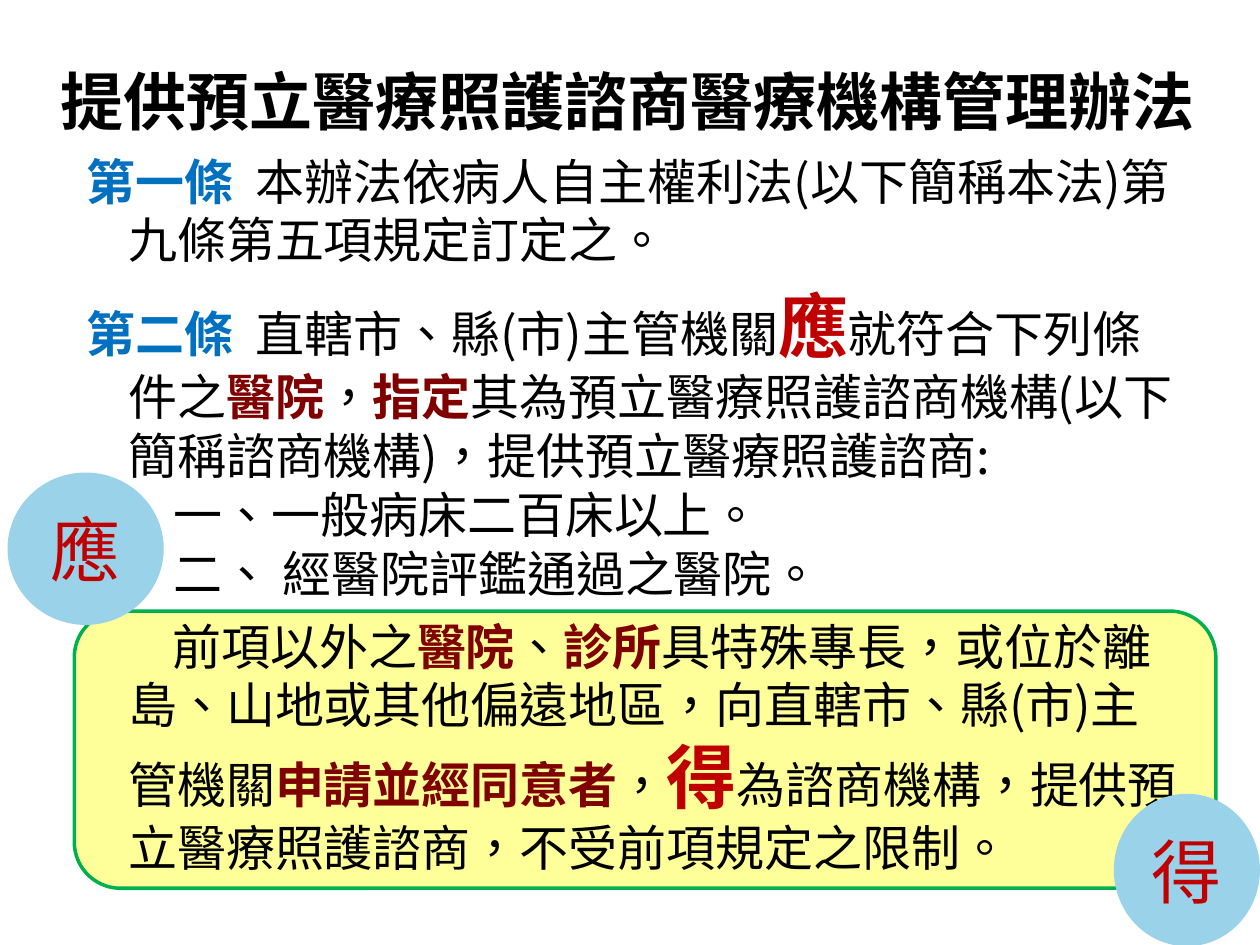
from lxml.etree import SubElement
from pptx import Presentation
from pptx.dml.color import RGBColor
from pptx.enum.lang import MSO_LANGUAGE_ID
from pptx.enum.shapes import MSO_SHAPE
from pptx.enum.text import MSO_ANCHOR, PP_ALIGN
from pptx.oxml.ns import qn
from pptx.util import Inches, Pt

FONT = "Noto Sans CJK SC"
STYLES = {
    "title": {"size": Pt(36), "bold": True, "color": "000000"},
    "plain": {"size": Pt(28), "bold": False, "color": "000000"},
    "article": {"size": Pt(28), "bold": True, "color": "0070C0"},
    "term": {"size": Pt(28), "bold": True, "color": "800000"},
    "duty": {"size": Pt(40), "bold": True, "color": "C00000"},
    "badge": {"size": Pt(40), "bold": False, "color": "C00000"},
}

presentation = Presentation()
presentation.slide_width = Inches(10)
presentation.slide_height = Inches(7.5)
slide = presentation.slides.add_slide(presentation.slide_layouts[6])


def color(value):
    return RGBColor.from_string(value)


def add_run(paragraph, text, style, name=FONT):
    run = paragraph.add_run()
    run.text = text
    values = {"name": name, "language_id": MSO_LANGUAGE_ID.TRADITIONAL_CHINESE} | STYLES[style]
    for attribute, value in values.items():
        if attribute == "color":
            run.font.color.rgb = color(value)
        else:
            setattr(run.font, attribute, value)
    SubElement(run.font._element, qn("a:ea")).set("typeface", FONT)


panel = slide.shapes.add_shape(
    MSO_SHAPE.ROUNDED_RECTANGLE, Inches(0.59), Inches(4.85), Inches(9.06), Inches(2.2))
panel.shadow.inherit = False
panel.fill.solid()
panel.fill.fore_color.rgb = color("FFFF99")
panel.line.color.rgb = color("00B050")
panel.line.width = Pt(2)

title = slide.shapes.add_textbox(Inches(0.32), Inches(0.5), Inches(9.32), Inches(0.76)).text_frame
frame_format = {"word_wrap": True, "vertical_anchor": MSO_ANCHOR.TOP,
                "margin_left": 0, "margin_right": 0, "margin_top": 0, "margin_bottom": 0}
for attribute, value in frame_format.items():
    setattr(title, attribute, value)
title.paragraphs[0].alignment = PP_ALIGN.CENTER
add_run(title.paragraphs[0], "提供預立醫療照護諮商醫療機構管理辦法", "title")

articles = [
    (0.33, -0.46, 8, [
        ("第一條  ", "article"),
        ("本辦法依病人自主權利法(以下簡稱本法)第九條第五項規定訂定之。", "plain")]),
    (0.33, -0.46, 8, [
        ("第二條  ", "article"), ("直轄市、縣(市)主管機關", "plain"), ("應", "duty"),
        ("就符合下列條件之", "plain"), ("醫院", "term"), ("，", "plain"), ("指定", "term"),
        ("其為預立醫療照護諮商機構(以下簡稱諮商機構)，提供預立醫療照護諮商:", "plain")]),
    (0.69, 0, 0, [("一、一般病床二百床以上。", "plain")]),
    (0.69, 0, 0, [("二、 經醫院評鑑通過之醫院。", "plain")]),
    (0.33, 0.35, 8, [
        ("前項以外之", "plain"), ("醫院", "term"), ("、", "plain"), ("診所", "term"),
        ("具特殊專長，或位於離島、山地或其他偏遠地區，向直轄市、縣(市)主管機關", "plain"),
        ("申請並經同意者", "term"), ("，", "plain"), ("得", "duty"),
        ("為諮商機構，提供預立醫療照護諮商，不受前項規定之限制。", "plain")]),
]
body = slide.shapes.add_textbox(Inches(0.59), Inches(1.15), Inches(8.87), Inches(4)).text_frame
body.word_wrap = True
for index, (margin, indent, space, runs) in enumerate(articles):
    paragraph = body.add_paragraph() if index else body.paragraphs[0]
    paragraph.space_before = Pt(space)
    properties = paragraph._p.get_or_add_pPr()
    properties.set("marL", str(Inches(margin)))
    properties.set("indent", str(Inches(indent)))
    for text, style in runs:
        add_run(paragraph, text, style)

for text, left, top, width in [("得", 8.84, 6.3, 1.16), ("應", 0.06, 3.75, 1.24)]:
    badge = slide.shapes.add_shape(
        MSO_SHAPE.OVAL, Inches(left), Inches(top), Inches(width), Inches(1.21))
    badge.shadow.inherit = False
    badge.fill.solid()
    badge.fill.fore_color.rgb = color("9AD3E9")
    badge.line.fill.background()
    badge.text_frame.vertical_anchor = MSO_ANCHOR.MIDDLE
    badge.text_frame.paragraphs[0].alignment = PP_ALIGN.CENTER
    add_run(badge.text_frame.paragraphs[0], text, "badge", "Arial")

presentation.save("out.pptx")
